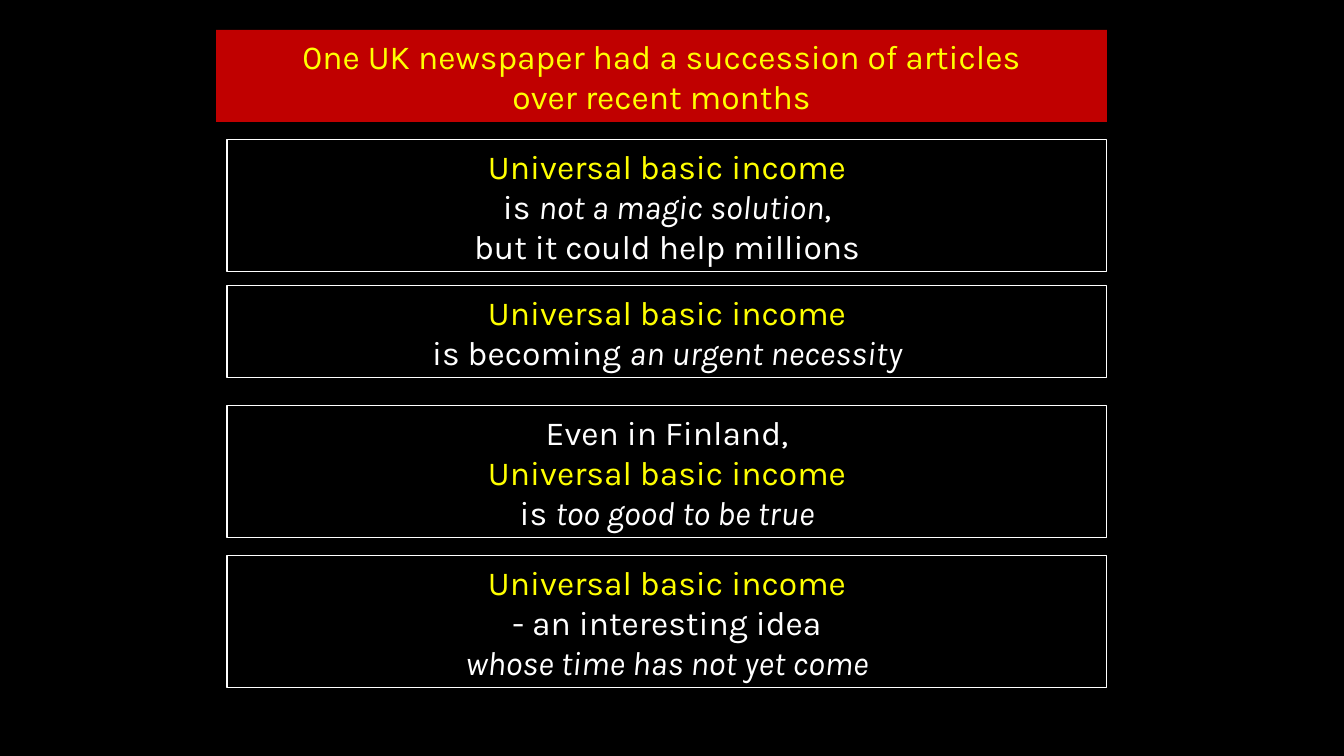
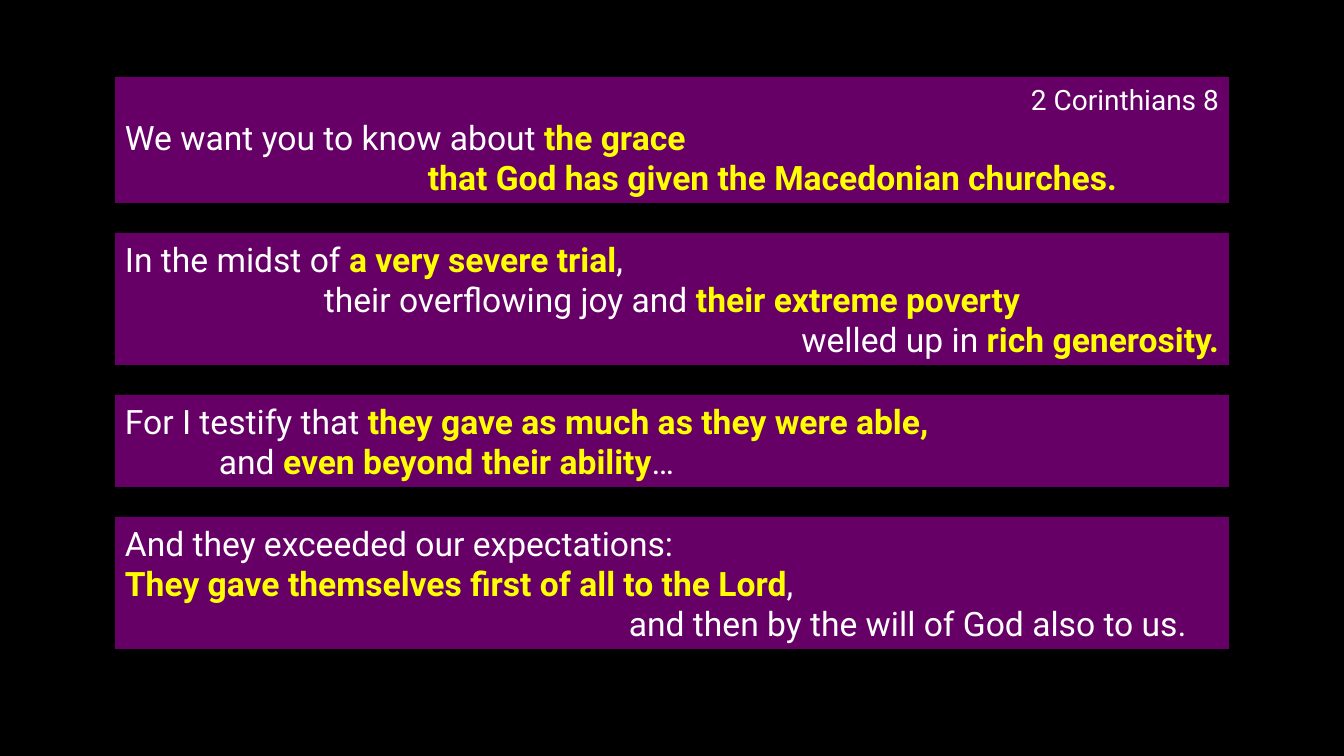
import pptx
import pptx.dml.color
import pptx.enum.shapes
import pptx.enum.text
import pptx.util

PX = 12192000 / 1344
BLACK, WHITE, YELLOW = "000000", "FFFFFF", "FFFF00"
RED, PURPLE = "C00000", "660066"
LINE_HEIGHT, PADDING = 40, 12
SIZE, SMALL = 24, 20
ALIGN = pptx.enum.text.PP_ALIGN
LEFT, CENTER, RIGHT = ALIGN.LEFT, ALIGN.CENTER, ALIGN.RIGHT

# Run styles: colour, bold, italic
PLAIN = (WHITE, False, False)
ITALIC = (WHITE, False, True)
KEY = (YELLOW, False, False)
STRONG = (YELLOW, True, False)

UBI = [("Universal basic income", KEY)]
TITLE = [
    [("0ne UK newspaper had a succession of articles", KEY)],
    [("over recent months", KEY)],
]
HEADLINES = [
    (140, [UBI,
           [("is ", PLAIN), ("not a magic solution", ITALIC), (",", PLAIN)],
           [("but it could help millions", PLAIN)]]),
    (286, [UBI,
           [("is becoming ", PLAIN), ("an urgent necessity", ITALIC)]]),
    (406, [[("Even in Finland,", PLAIN)],
           UBI,
           [("is ", PLAIN), ("too good to be true", ITALIC)]]),
    (556, [UBI,
           [("- an interesting idea", PLAIN)],
           [("whose time has not yet come", ITALIC)]]),
]

# Each verse line: alignment, left indent, size, runs
VERSES = [
    [(RIGHT, 0, SMALL, [("2 Corinthians 8", PLAIN)]),
     (LEFT, 0, SIZE, [("We want you to know about ", PLAIN), ("the grace", STRONG)]),
     (LEFT, 303, SIZE, [("that God has given the Macedonian churches.", STRONG)])],
    [(LEFT, 0, SIZE, [("In the midst of ", PLAIN), ("a very severe trial", STRONG),
                      (",", PLAIN)]),
     (CENTER, 0, SIZE, [("their overflowing joy and ", PLAIN),
                        ("their extreme poverty", STRONG)]),
     (RIGHT, 0, SIZE, [("welled up in ", PLAIN), ("rich generosity.", STRONG)])],
    [(LEFT, 0, SIZE, [("For I testify that ", PLAIN),
                      ("they gave as much as they were able,", STRONG)]),
     (LEFT, 94, SIZE, [("and ", PLAIN), ("even beyond their ability", STRONG),
                       ("…", PLAIN)])],
    [(LEFT, 0, SIZE, [("And they exceeded our expectations:", PLAIN)]),
     (LEFT, 0, SIZE, [("They gave themselves first of all to the Lord", STRONG),
                      (",", PLAIN)]),
     (LEFT, 504, SIZE, [("and then by the will of God also to us.", PLAIN)])],
]


def px(n):
    return pptx.util.Emu(round(n * PX))


def rgb(color):
    return pptx.dml.color.RGBColor.from_string(color)


def paint(shape, fill):
    shape.fill.solid()
    shape.fill.fore_color.rgb = rgb(fill)


def box_height(lines):
    """Height of a box holding lines, each given as (align, indent, size, runs)."""
    return PADDING + sum(LINE_HEIGHT if line[2] == SIZE else 34 for line in lines)


def centered(lines):
    return [(CENTER, 0, SIZE, runs) for runs in lines]


def write(shape, lines, font):
    tf = shape.text_frame
    tf.word_wrap = True
    tf.auto_size = pptx.enum.text.MSO_AUTO_SIZE.SHAPE_TO_FIT_TEXT
    tf.vertical_anchor = pptx.enum.text.MSO_ANCHOR.MIDDLE
    for i, (align, indent, size, runs) in enumerate(lines):
        p = tf.add_paragraph() if i else tf.paragraphs[0]
        p.alignment = align
        if indent:
            p._p.get_or_add_pPr().set("marL", str(px(indent)))
        for text, (color, bold, italic) in runs:
            r = p.add_run()
            r.text = text
            r.font.name = font
            r.font.size = pptx.util.Pt(size)
            r.font.color.rgb = rgb(color)
            r.font.bold, r.font.italic = bold, italic


def add_title(s, left, top, width, lines):
    sp = s.shapes.title
    sp.left, sp.top = px(left), px(top)
    sp.width, sp.height = px(width), px(box_height(lines))
    paint(sp, RED)
    write(sp, lines, "Karla")


def add_box(s, left, top, width, lines, fill, font, outline=None):
    sp = s.shapes.add_shape(pptx.enum.shapes.MSO_SHAPE.RECTANGLE, px(left), px(top),
                            px(width), px(box_height(lines)))
    sp.shadow.inherit = False
    paint(sp, fill)
    if outline:
        sp.line.color.rgb = rgb(outline)
        sp.line.width = pptx.util.Pt(0.75)
    else:
        sp.line.fill.background()
    write(sp, lines, font)


def add_headlines_slide(prs):
    s = prs.slides.add_slide(prs.slide_layouts.get_by_name("Title Only"))
    add_title(s, 216, 30, 891, centered(TITLE))
    for top, lines in HEADLINES:
        add_box(s, 227, top, 880, centered(lines), BLACK, "Karla", WHITE)


def add_verses_slide(prs):
    s = prs.slides.add_slide(prs.slide_layouts.get_by_name("Blank"))
    top, gap = 77, 30
    for lines in VERSES:
        add_box(s, 115, top, 1114, lines, PURPLE, "Roboto")
        top += box_height(lines) + gap


def main():
    prs = pptx.Presentation()
    prs.slide_width, prs.slide_height = px(1344), px(756)
    paint(prs.slide_master.background, BLACK)
    add_headlines_slide(prs)
    add_verses_slide(prs)
    prs.save("out.pptx")


if __name__ == "__main__":
    main()
